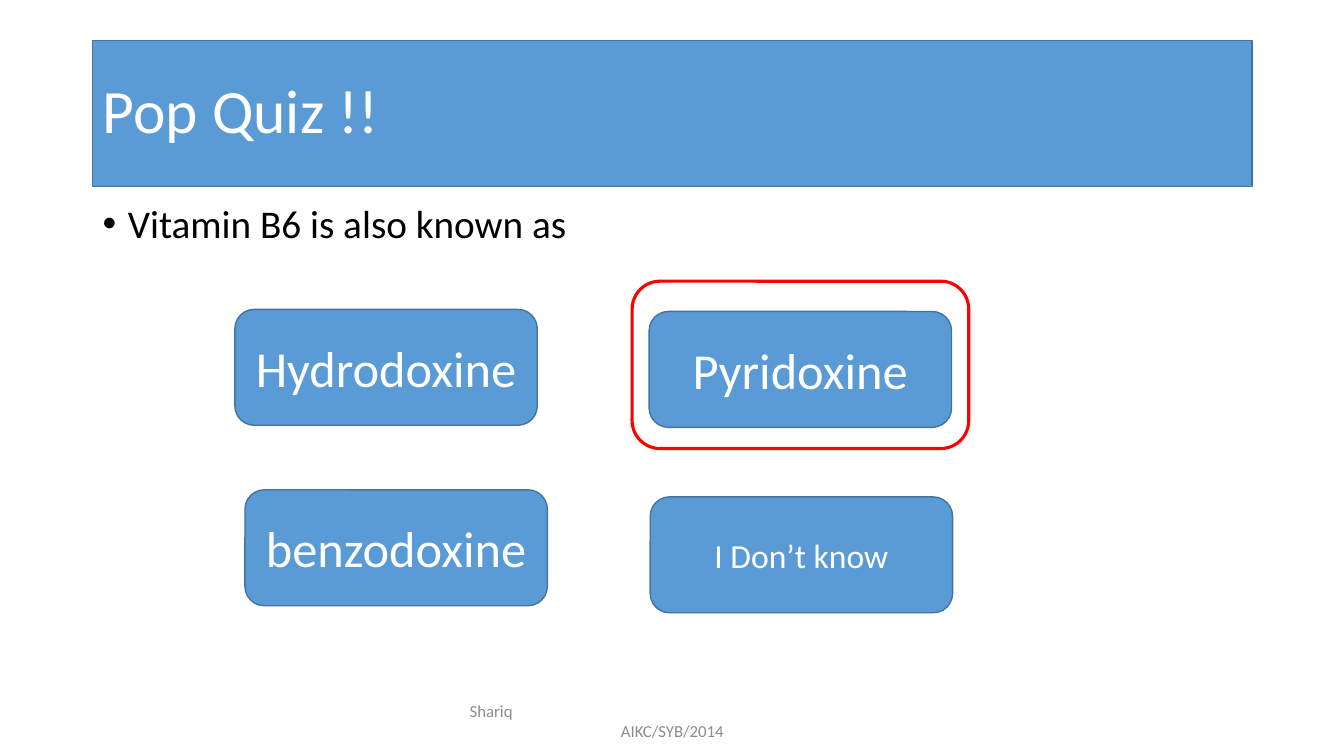
import pptx
import pptx.dml.color
import pptx.enum.shapes
import pptx.enum.text
import pptx.oxml.ns
import pptx.util
from lxml import etree

Pt = pptx.util.Pt
In = pptx.util.Inches
Align = pptx.enum.text.PP_ALIGN
Anchor = pptx.enum.text.MSO_ANCHOR
Kind = pptx.enum.shapes.MSO_SHAPE

HUES = {"blue": "5B9BD5", "edge": "43739E", "white": "FFFFFF",
        "black": "000000", "gray": "8C8C8C", "red": "FF0000"}
FONT = "Calibri"


def hue(name):
    return pptx.dml.color.RGBColor.from_string(HUES[name])


class Deck:
    """Style and current slide; boxes are (left, top, width, height) in percent of the slide."""

    def __init__(self):
        self.file = pptx.Presentation()
        self.file.slide_width, self.file.slide_height = In(13.33), In(7.5)
        self.slide = self.file.slides.add_slide(self.file.slide_layouts[5])

    def place(self, box):
        wide, high = self.file.slide_width, self.file.slide_height
        return [int(part * side / 100) for part, side in zip(box, (wide, high) * 2)]

    def paint(self, shape, fill="blue", line="edge", width=1):
        if fill:
            shape.fill.solid()
            shape.fill.fore_color.rgb = hue(fill)
        else:
            shape.fill.background()
        shape.line.color.rgb = hue(line)
        shape.line.width = Pt(width)

    def label(self, shape, lines, size, color, anchor=Anchor.MIDDLE, **form):
        """Fill the shape with one paragraph per line; form holds paragraph settings."""
        frame = shape.text_frame
        frame.text = "\n".join(lines)
        look = {"word_wrap": True, "vertical_anchor": anchor,
                "auto_size": pptx.enum.text.MSO_AUTO_SIZE.NONE}
        for key, value in look.items():
            setattr(frame, key, value)
        for para in frame.paragraphs:
            for key, value in form.items():
                setattr(para, key, value)
            for run in para.runs:
                for key, value in {"name": FONT, "size": Pt(size)}.items():
                    setattr(run.font, key, value)
                run.font.color.rgb = hue(color)
        return frame.paragraphs

    def title(self, text, box):
        shape = self.slide.shapes.title
        shape.left, shape.top, shape.width, shape.height = self.place(box)
        self.paint(shape)
        self.label(shape, [text], 44, "white", alignment=Align.LEFT, line_spacing=0.9)

    def text(self, lines, box, size, color, **form):
        shape = self.slide.shapes.add_textbox(*self.place(box))
        return self.label(shape, lines, size, color, **form)

    def bullet(self, text, box):
        para = self.text([text], box, 28, "black", anchor=Anchor.TOP,
                         line_spacing=0.9, space_before=Pt(10))[0]
        self.indent(para, 0.25, -0.25)
        qn = pptx.oxml.ns.qn
        props = para._p.get_or_add_pPr()
        etree.SubElement(props, qn("a:buFont")).set("typeface", "Arial")
        etree.SubElement(props, qn("a:buChar")).set("char", "•")

    def indent(self, para, left, first=0):
        props = para._p.get_or_add_pPr()
        for key, value in {"marL": left, "indent": first}.items():
            props.set(key, str(In(value)))

    def round(self, box, **style):
        shape = self.slide.shapes.add_shape(Kind.ROUNDED_RECTANGLE, *self.place(box))
        shape.shadow.inherit = False
        self.paint(shape, **style)
        return shape

    def choice(self, text, left, top, size=36):
        shape = self.round((left, top, 22.5, 15.33))
        self.label(shape, [text], size, "white", alignment=Align.CENTER)


def main():
    deck = Deck()
    deck.bullet("Vitamin B6 is also known as", (6.9, 26.4, 86.25, 10.53))
    deck.title("Pop Quiz !!", (6.9, 5.33, 86.25, 19.33))
    name, code = deck.text(["Shariq", "AIKC/SYB/2014"], (33.15, 92.67, 33.75, 5.33),
                           12, "gray", alignment=Align.CENTER)
    name.alignment = Align.LEFT
    deck.indent(name, 0.14)
    deck.choice("Hydrodoxine", 17.48, 40.93)
    deck.choice("I Don’t know", 48.38, 65.73, size=24)
    deck.choice("Pyridoxine", 48.3, 41.2)
    deck.choice("benzodoxine", 18.23, 64.8)
    deck.round((47.03, 37.2, 25.05, 22.13), fill=None, line="red", width=2.25)
    deck.file.save("out.pptx")


if __name__ == "__main__":
    main()
